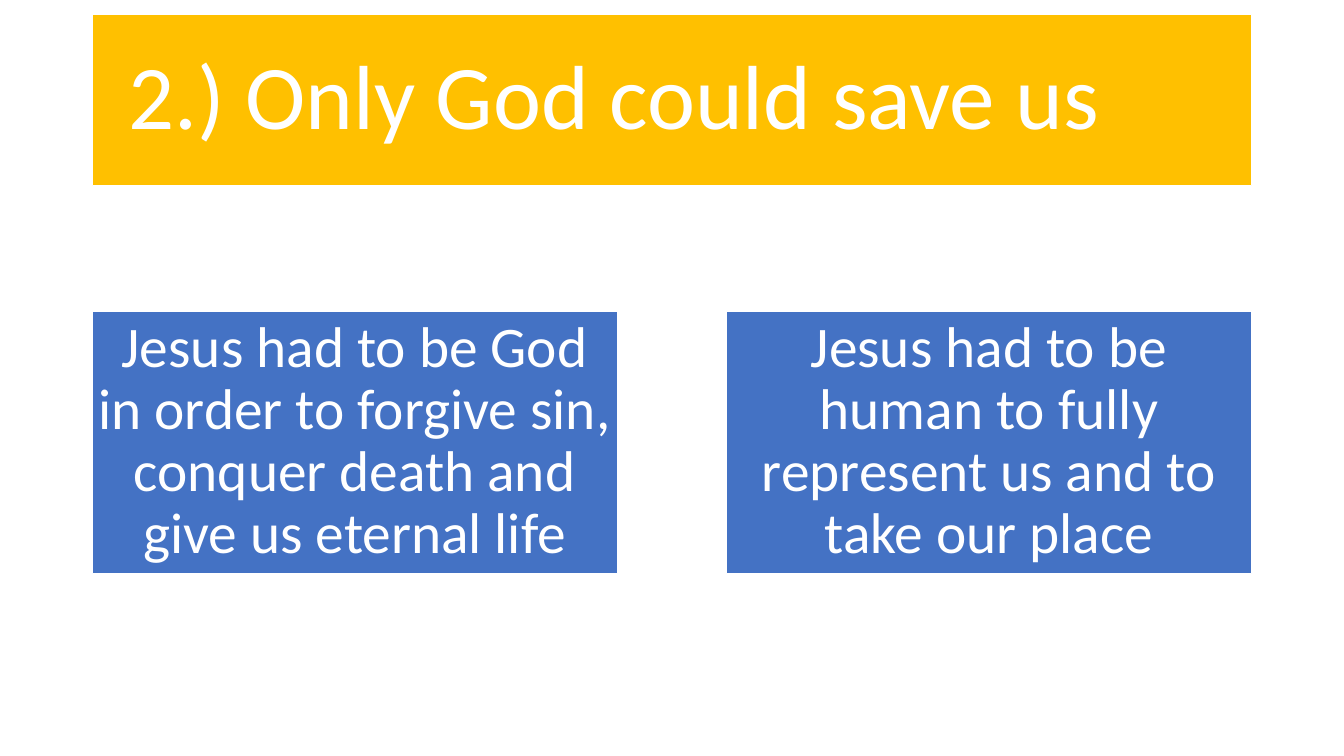
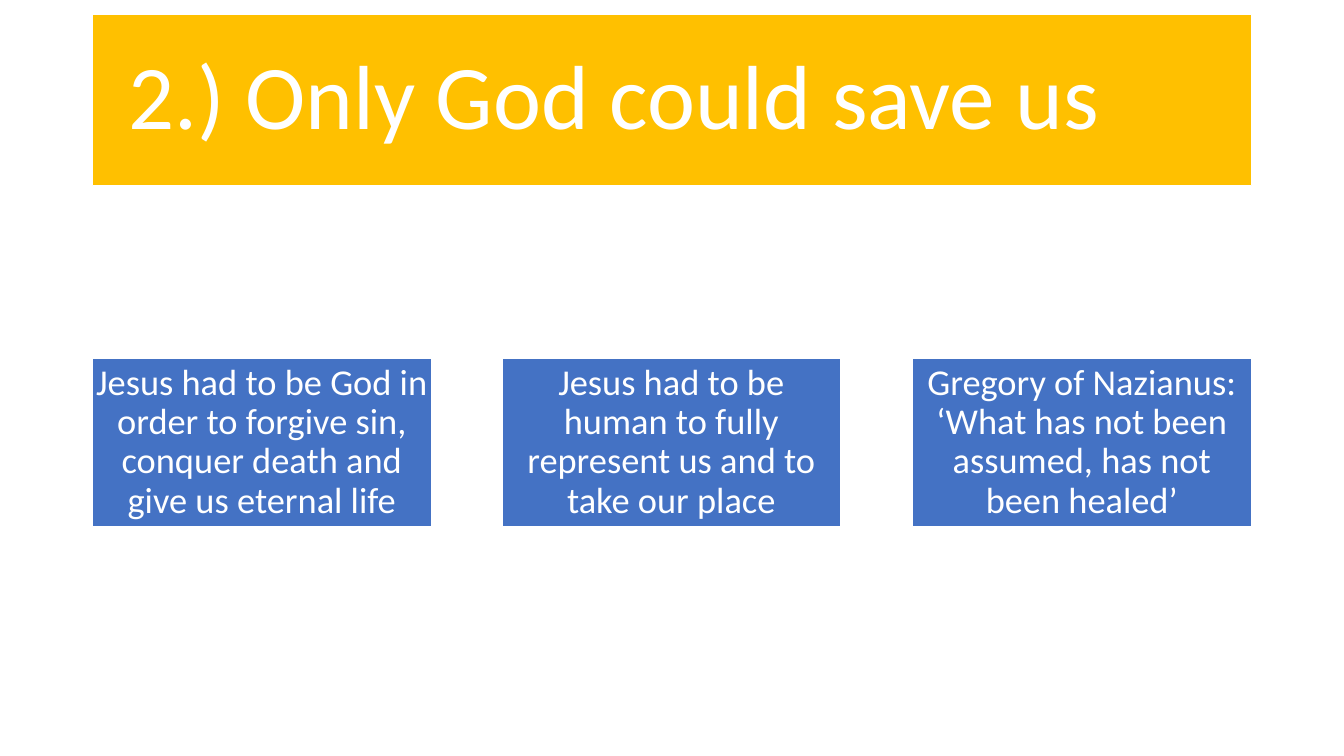
from dataclasses import dataclass

from lxml import etree
from pptx import Presentation
from pptx import util as u
from pptx.dml.color import RGBColor
from pptx.enum import shapes, text
from pptx.oxml import ns

EMU_PER_PX = 9525
SLIDE_WIDTH, SLIDE_HEIGHT = 1280, 720

WHITE = RGBColor(0xFF, 0xFF, 0xFF)
GOLD = RGBColor(0xFF, 0xC0, 0x00)
BLUE = RGBColor(0x44, 0x72, 0xC4)
FONT = "Calibri"

TITLE_ONLY = 5
TITLE = "2.) Only God could save us"
DIVINE = "Jesus had to be God in order to forgive sin, conquer death and give us eternal life"
HUMAN = "Jesus had to be human to fully represent us and to take our place"
GREGORY = "Gregory of Nazianus: ‘What has not been assumed, has not been healed’"

CARD_CENTRE = 421
CARD_GAP_RATIO = 0.21


@dataclass(frozen=True)
class Box:
    left: int
    top: int
    width: int
    height: int


@dataclass(frozen=True)
class CardSlide:
    cards: tuple[str, ...]
    size: int
    inset: int


BAND = Box(88, 14, 1104, 163)
SLIDES = (
    CardSlide((DIVINE, HUMAN), size=41, inset=3),
    CardSlide((DIVINE, HUMAN, GREGORY), size=26, inset=2),
)


def px(length: int) -> u.Emu:
    return u.Emu(length * EMU_PER_PX)


def fill_shape(shape, colour: RGBColor) -> None:
    shape.fill.solid()
    shape.fill.fore_color.rgb = colour
    shape.line.color.rgb = WHITE
    shape.line.width = u.Pt(1)


def write_text(shape, content: str, *, size: int, align: text.PP_ALIGN,
               inset_x: int, inset_y: int) -> None:
    frame = shape.text_frame
    frame.word_wrap = True
    frame.auto_size = text.MSO_AUTO_SIZE.NONE
    frame.vertical_anchor = text.MSO_ANCHOR.MIDDLE
    frame.margin_left = frame.margin_right = px(inset_x)
    frame.margin_top = frame.margin_bottom = px(inset_y)
    paragraph = frame.paragraphs[0]
    paragraph.alignment = align
    paragraph.line_spacing = 0.9
    run = paragraph.add_run()
    run.text = content
    run.font.name = FONT
    run.font.size = u.Pt(size)
    run.font.color.rgb = WHITE


def draw_title(slide) -> None:
    title = slide.shapes.title
    title.left, title.top = px(BAND.left), px(BAND.top)
    title.width, title.height = px(BAND.width), px(BAND.height)
    geometry = etree.SubElement(title.element.spPr, ns.qn("a:prstGeom"), prst="roundRect")
    etree.SubElement(geometry, ns.qn("a:avLst"))
    fill_shape(title, GOLD)
    write_text(title, TITLE, size=65, align=text.PP_ALIGN.LEFT, inset_x=34, inset_y=8)


def card_boxes(count: int) -> list[Box]:
    width = round(BAND.width / (count + CARD_GAP_RATIO * (count - 1)))
    height = width // 2
    step = (BAND.width - width) / (count - 1)
    top = CARD_CENTRE - height // 2
    return [Box(BAND.left + round(index * step), top, width, height) for index in range(count)]


def draw_cards(slide, content: CardSlide) -> None:
    for box, card in zip(card_boxes(len(content.cards)), content.cards):
        shape = slide.shapes.add_shape(
            shapes.MSO_SHAPE.RECTANGLE,
            px(box.left), px(box.top), px(box.width), px(box.height),
        )
        shape.shadow.inherit = False
        fill_shape(shape, BLUE)
        write_text(shape, card, size=content.size, align=text.PP_ALIGN.CENTER,
                   inset_x=content.inset, inset_y=content.inset)


def main() -> None:
    presentation = Presentation()
    presentation.slide_width = px(SLIDE_WIDTH)
    presentation.slide_height = px(SLIDE_HEIGHT)
    for content in SLIDES:
        slide = presentation.slides.add_slide(presentation.slide_layouts[TITLE_ONLY])
        draw_title(slide)
        draw_cards(slide, content)
    presentation.save("out.pptx")


if __name__ == "__main__":
    main()
